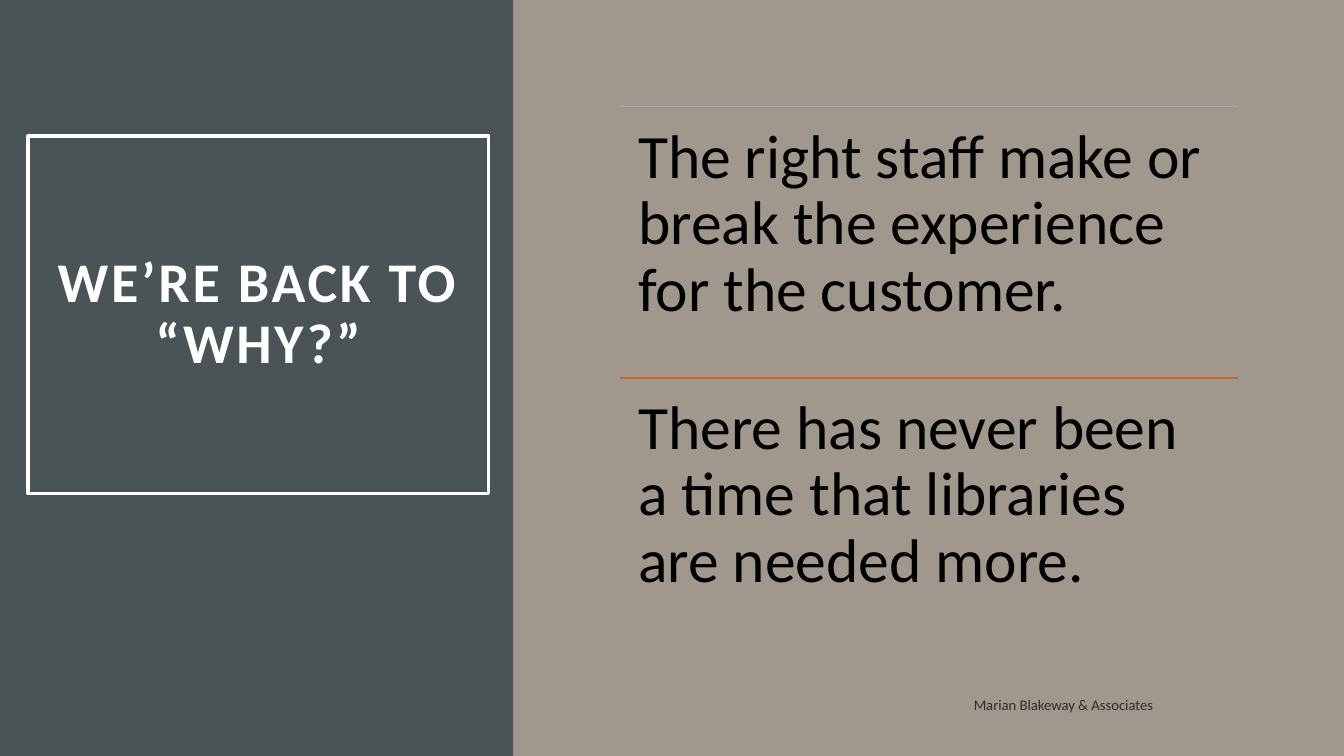
from lxml.etree import SubElement
from pptx import Presentation
from pptx.dml.color import RGBColor
from pptx.enum.shapes import MSO_CONNECTOR, MSO_SHAPE
from pptx.enum.text import MSO_ANCHOR, MSO_AUTO_SIZE, PP_ALIGN
from pptx.oxml.ns import qn
from pptx.util import Pt

COLORS = {
    "background": "A0988C",
    "panel": "4A5356",
    "title": "FFFFFF",
    "text": "000000",
    "blue rule": "9BAFB5",
    "orange rule": "C96731",
}
FONT = "Calibri"
STATEMENTS = [
    ("The right staff make or break the experience for the customer.", "blue rule"),
    ("There has never been a time that libraries are needed more.", "orange rule"),
]
STATEMENT_LEFT, STATEMENT_TOP = 442.8, 76.3
STATEMENT_WIDTH, STATEMENT_HEIGHT = 441.4, 193.7


def color(name):
    return RGBColor.from_string(COLORS[name])


def write_text(shape, text, size, color_name, inset, anchor, alignment):
    """Fill a shape with one paragraph and return the paragraph."""
    frame = shape.text_frame
    frame.word_wrap = True
    frame.auto_size = MSO_AUTO_SIZE.NONE
    frame.vertical_anchor = anchor
    frame.margin_left = frame.margin_right = Pt(inset)
    frame.margin_top = frame.margin_bottom = Pt(inset)
    frame.text = text
    paragraph = frame.paragraphs[0]
    paragraph.alignment = alignment
    paragraph.font.name = FONT
    paragraph.font.size = Pt(size)
    paragraph.font.color.rgb = color(color_name)
    return paragraph


def add_panel(slide):
    panel = slide.shapes.add_shape(MSO_SHAPE.RECTANGLE, 0, 0, Pt(366.5), Pt(540))
    panel.shadow.inherit = False
    panel.fill.solid()
    panel.fill.fore_color.rgb = color("panel")
    panel.line.fill.background()
    # The panel belongs behind the title
    slide.shapes.title._element.addprevious(panel._element)


def format_title(title, text):
    title.left, title.top = Pt(20), Pt(97)
    title.width, title.height = Pt(329), Pt(255.6)
    title.line.color.rgb = color("title")
    title.line.width = Pt(2.5)
    paragraph = write_text(title, text, 40, "title", 14.4,
                           MSO_ANCHOR.MIDDLE, PP_ALIGN.CENTER)
    paragraph.font.bold = True
    paragraph.line_spacing = 0.9
    paragraph.runs[0]._r.get_or_add_rPr().set("spc", "200")


def add_statement(slide, top, text, rule_color):
    """Add a thin rule with a large statement below it."""
    rule = slide.shapes.add_connector(
        MSO_CONNECTOR.STRAIGHT, Pt(STATEMENT_LEFT), Pt(top),
        Pt(STATEMENT_LEFT + STATEMENT_WIDTH), Pt(top))
    rule.line.color.rgb = color(rule_color)
    rule.line.width = Pt(1)
    SubElement(rule._element.spPr, qn("a:effectLst"))
    box = slide.shapes.add_textbox(Pt(STATEMENT_LEFT), Pt(top),
                                   Pt(STATEMENT_WIDTH), Pt(STATEMENT_HEIGHT))
    paragraph = write_text(box, text, 44, "text", 13,
                           MSO_ANCHOR.TOP, PP_ALIGN.LEFT)
    paragraph.line_spacing = 0.9


def add_footer(slide, text):
    box = slide.shapes.add_textbox(Pt(455), Pt(491), Pt(375.9), Pt(25.2))
    paragraph = write_text(box, text, 10.5, "text", 7.2,
                           MSO_ANCHOR.MIDDLE, PP_ALIGN.RIGHT)
    font_color = next(paragraph._p.iter(qn("a:srgbClr")))
    SubElement(font_color, qn("a:alpha")).set("val", "70000")


def main():
    presentation = Presentation()
    presentation.slide_width, presentation.slide_height = Pt(960), Pt(540)
    slide = presentation.slides.add_slide(presentation.slide_layouts[5])
    slide.background.fill.solid()
    slide.background.fill.fore_color.rgb = color("background")

    add_panel(slide)
    format_title(slide.shapes.title, "WE’RE BACK TO “WHY?”")
    add_footer(slide, "Marian Blakeway & Associates")
    for index, (text, rule_color) in enumerate(STATEMENTS):
        add_statement(slide, STATEMENT_TOP + index * STATEMENT_HEIGHT, text, rule_color)
    presentation.save("out.pptx")


if __name__ == "__main__":
    main()
